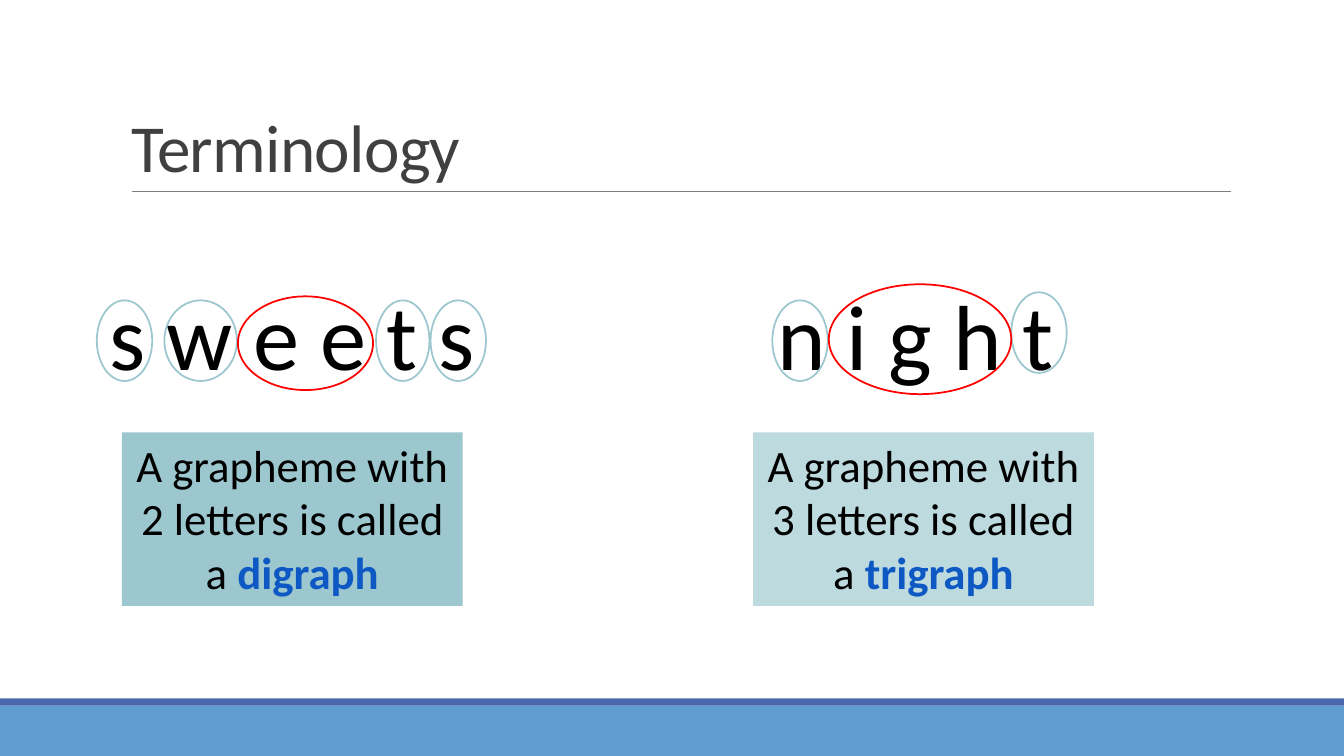
from dataclasses import dataclass

import pptx
import pptx.dml.color
import pptx.enum.shapes
import pptx.enum.text
import pptx.oxml.ns
import pptx.util
from lxml import etree
from pptx.util import Inches

SHAPES = pptx.enum.shapes.MSO_SHAPE
ALIGN = pptx.enum.text.PP_ALIGN
ANCHOR = pptx.enum.text.MSO_ANCHOR


@dataclass(frozen=True)
class Theme:
    font: str = "Calibri"
    title_size: int = 48
    word_size: int = 66
    note_size: int = 32
    ink: str = "000000"
    title: str = "404040"
    term: str = "0E58C4"
    rule: str = "808080"
    footer: str = "629DD1"
    footer_edge: str = "4A66AC"
    single: str = "9CC7CE"
    group: str = "FF0000"
    digraph: str = "9CC7CE"
    trigraph: str = "BDDADF"


THEME = Theme()


def rgb(value):
    return pptx.dml.color.RGBColor.from_string(value)


def add_span(para, text, size, color, bold=False):
    span = para.add_run()
    span.text = text
    span.font.name = THEME.font
    span.font.size = pptx.util.Pt(size)
    span.font.bold = bold
    span.font.color.rgb = rgb(color)
    return span


def add_block(page, left, top, width, height, fill):
    block = page.shapes.add_shape(
        SHAPES.RECTANGLE, Inches(left), Inches(top), Inches(width), Inches(height))
    block.shadow.inherit = False
    block.fill.solid()
    block.fill.fore_color.rgb = rgb(fill)
    block.line.fill.background()
    return block


def add_rule(page, left, right, top):
    rule = page.shapes.add_connector(
        pptx.enum.shapes.MSO_CONNECTOR.STRAIGHT,
        Inches(left), Inches(top), Inches(right), Inches(top))
    rule.line.color.rgb = rgb(THEME.rule)
    rule.line.width = pptx.util.Pt(0.5)
    etree.SubElement(rule._element.spPr, pptx.oxml.ns.qn("a:effectLst"))


def add_ring(page, left, top, width, height, color):
    ring = page.shapes.add_shape(
        SHAPES.OVAL, Inches(left), Inches(top), Inches(width), Inches(height))
    ring.shadow.inherit = False
    ring.fill.background()
    ring.line.color.rgb = rgb(color)
    ring.line.width = pptx.util.Pt(1.25)


def add_title(page, text):
    title = page.shapes.title
    title.left, title.top = Inches(1.2), Inches(0.31)
    title.width, title.height = Inches(11), Inches(1.59)
    title.text_frame.vertical_anchor = ANCHOR.BOTTOM
    para = title.text_frame.paragraphs[0]
    para.alignment = ALIGN.LEFT
    para.line_spacing = 0.85
    span = add_span(para, text, THEME.title_size, THEME.title)
    span.font._element.set("spc", "-50")


def add_word(page, left, text):
    box = page.shapes.add_textbox(Inches(left), Inches(2.71), Inches(4.16), Inches(1.21))
    box.text_frame.word_wrap = True
    para = box.text_frame.paragraphs[0]
    para.alignment = ALIGN.CENTER
    add_span(para, text, THEME.word_size, THEME.ink)


def add_definition(page, left, count, term, fill):
    block = add_block(page, left, 4.29, 3.38, 1.72, fill)
    block.text_frame.word_wrap = True
    block.text_frame.vertical_anchor = ANCHOR.TOP
    para = block.text_frame.paragraphs[0]
    para.alignment = ALIGN.CENTER
    add_span(para, f"A grapheme with {count} letters is called a ",
             THEME.note_size, THEME.ink)
    add_span(para, term, THEME.note_size, THEME.term, bold=True)


def add_example(page, word_left, word, singles, group):
    """Place a spaced word, rings for single letters and one for the grapheme."""
    add_word(page, word_left, word)
    for left, top, width in singles:
        add_ring(page, left, top, width, 0.8, THEME.single)
    add_ring(page, *group, THEME.group)


def main():
    deck = pptx.Presentation()
    deck.slide_width, deck.slide_height = Inches(13.33), Inches(7.5)
    page = deck.slides.add_slide(deck.slide_layouts[5])

    # Footer band and title rule
    add_block(page, 0, 7, 13.33, 0.5, THEME.footer)
    add_block(page, 0, 6.93, 13.33, 0.07, THEME.footer_edge)
    add_rule(page, 1.31, 12.21, 1.9)

    # Definitions
    add_definition(page, 1.21, 2, "digraph", THEME.digraph)
    add_definition(page, 7.47, 3, "trigraph", THEME.trigraph)

    # Example words with their graphemes ringed
    add_example(page, 0.82, "s w e e t s",
                [(0.96, 2.98, 0.55), (1.63, 2.98, 0.72),
                 (3.73, 2.98, 0.53), (4.27, 2.98, 0.55)],
                (2.36, 2.94, 1.34, 0.93))
    add_example(page, 7, "n i g h t",
                [(7.66, 2.98, 0.55), (10.03, 2.9, 0.55)],
                (8.22, 2.82, 1.81, 1.09))

    add_title(page, "Terminology")
    deck.save("out.pptx")


if __name__ == "__main__":
    main()
